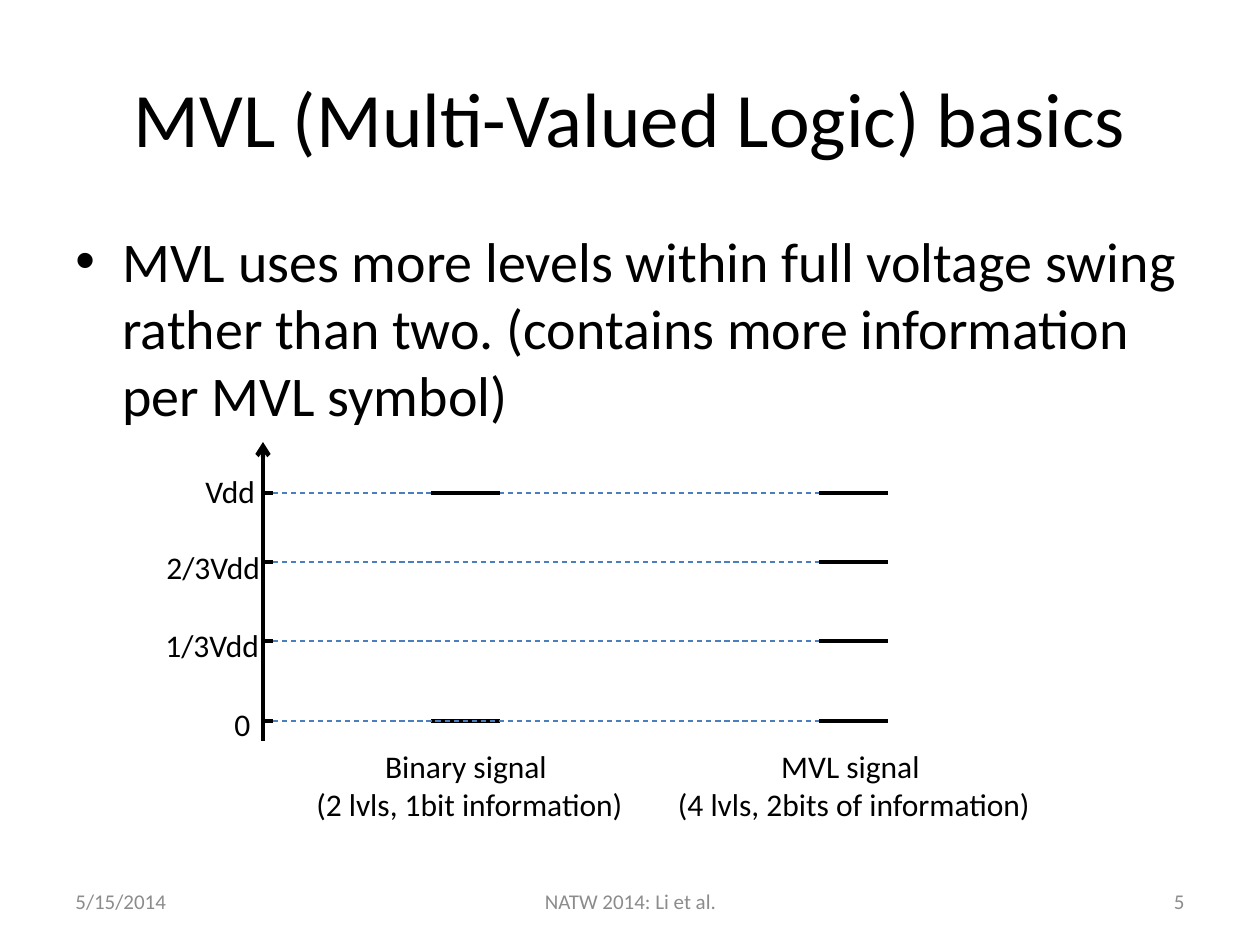
from lxml import etree
from pptx import Presentation
from pptx.dml.color import RGBColor
from pptx.enum.dml import MSO_LINE
from pptx.enum.shapes import MSO_CONNECTOR
from pptx.enum.text import MSO_ANCHOR, PP_ALIGN
from pptx.oxml.ns import qn
from pptx.util import Pt

SCALE = 914400 / 126
LEFT, MID, RIGHT = PP_ALIGN.LEFT, PP_ALIGN.CENTER, PP_ALIGN.RIGHT
TOP, CENTER = MSO_ANCHOR.TOP, MSO_ANCHOR.MIDDLE
STRAIGHT = MSO_CONNECTOR.STRAIGHT
DASH = MSO_LINE.DASH
COLORS = {"ink": "000000", "guide": "4B7EBC", "foot": "8C8C8C"}
AXIS, TICK, BINARY, MULTI, MARK = 263, 273, 431, 819, 69
LEVELS = [493, 562, 641, 721]


def emu(px):
    return round(px * SCALE)


def color(name):
    return RGBColor.from_string(COLORS[name])


def text(slide, box, lines, size, align=LEFT, anchor=TOP, tone="ink", wrap=True):
    shape = slide.shapes.add_textbox(*map(emu, box))
    frame = shape.text_frame
    frame.word_wrap = wrap
    frame.vertical_anchor = anchor
    frame.text = "\n".join(lines)
    for para in frame.paragraphs:
        para.alignment = align
        para.font.name = "Calibri"
        para.font.size = Pt(size)
        para.font.color.rgb = color(tone)
    return frame


def bullet(slide, box, line, size, indent):
    para = text(slide, box, [line], size).paragraphs[0]
    props = para._p.get_or_add_pPr()
    props.set("marL", str(emu(indent)))
    props.set("indent", str(-emu(indent)))
    font = etree.Element(qn("a:buFont"), typeface="Arial")
    mark = etree.Element(qn("a:buChar"), char="•")
    props.insert(0, font)
    props.insert(1, mark)


def line(slide, start, end, tone="ink", width=2.5):
    shape = slide.shapes.add_connector(STRAIGHT, *map(emu, start + end))
    shape.line.color.rgb = color(tone)
    shape.line.width = Pt(width)
    etree.SubElement(shape._element.spPr, qn("a:effectLst"))
    return shape


def guide(slide, y):
    line(slide, (TICK, y), (MULTI, y), "guide", 0.75).line.dash_style = DASH


def axis(slide):
    shape = line(slide, (AXIS, 741), (AXIS, 442))
    etree.SubElement(shape.line._get_or_add_ln(), qn("a:tailEnd"), type="arrow")
    for y in LEVELS:
        line(slide, (AXIS, y), (TICK, y))


def signal(slide, x, levels):
    for y in levels:
        line(slide, (x, y), (x + MARK, y))


def main():
    deck = Presentation()
    deck.slide_width, deck.slide_height = emu(1260), emu(945)
    slide = deck.slides.add_slide(deck.slide_layouts[6])

    text(slide, (63, 38, 1134, 157), ["MVL (Multi-Valued Logic) basics"], 44, MID, CENTER)
    bullet(slide, (63, 220, 1134, 624),
           "MVL uses more levels within full voltage swing rather than two. "
           "(contains more information per MVL symbol)", 32, 47)

    guide(slide, LEVELS[0])
    axis(slide)
    signal(slide, BINARY, [LEVELS[0], LEVELS[-1]])
    signal(slide, MULTI, LEVELS)
    for y in LEVELS[1:]:
        guide(slide, y)

    for x, y, width, label in [(193, 466, 76, "Vdd"), (154, 542, 121, "2/3Vdd"),
                               (153, 620, 121, "1/3Vdd"), (222, 699, 42, "0")]:
        text(slide, (x, y, width, 50), [label], 18, wrap=False)

    for x, width, lines in [
        (302, 335, ["Binary signal ", "(2 lvls, 1bit information)"]),
        (663, 382, ["MVL signal ", "(4 lvls, 2bits of information)"]),
    ]:
        text(slide, (x, 741, width, 89), lines, 18, MID, wrap=False)

    for x, width, label, align in [(63, 294, "5/15/2014", LEFT),
                                   (431, 399, "NATW 2014: Li et al.", MID),
                                   (903, 294, "5", RIGHT)]:
        text(slide, (x, 876, width, 50), [label], 12, align, CENTER, "foot")

    deck.save("out.pptx")


if __name__ == "__main__":
    main()
